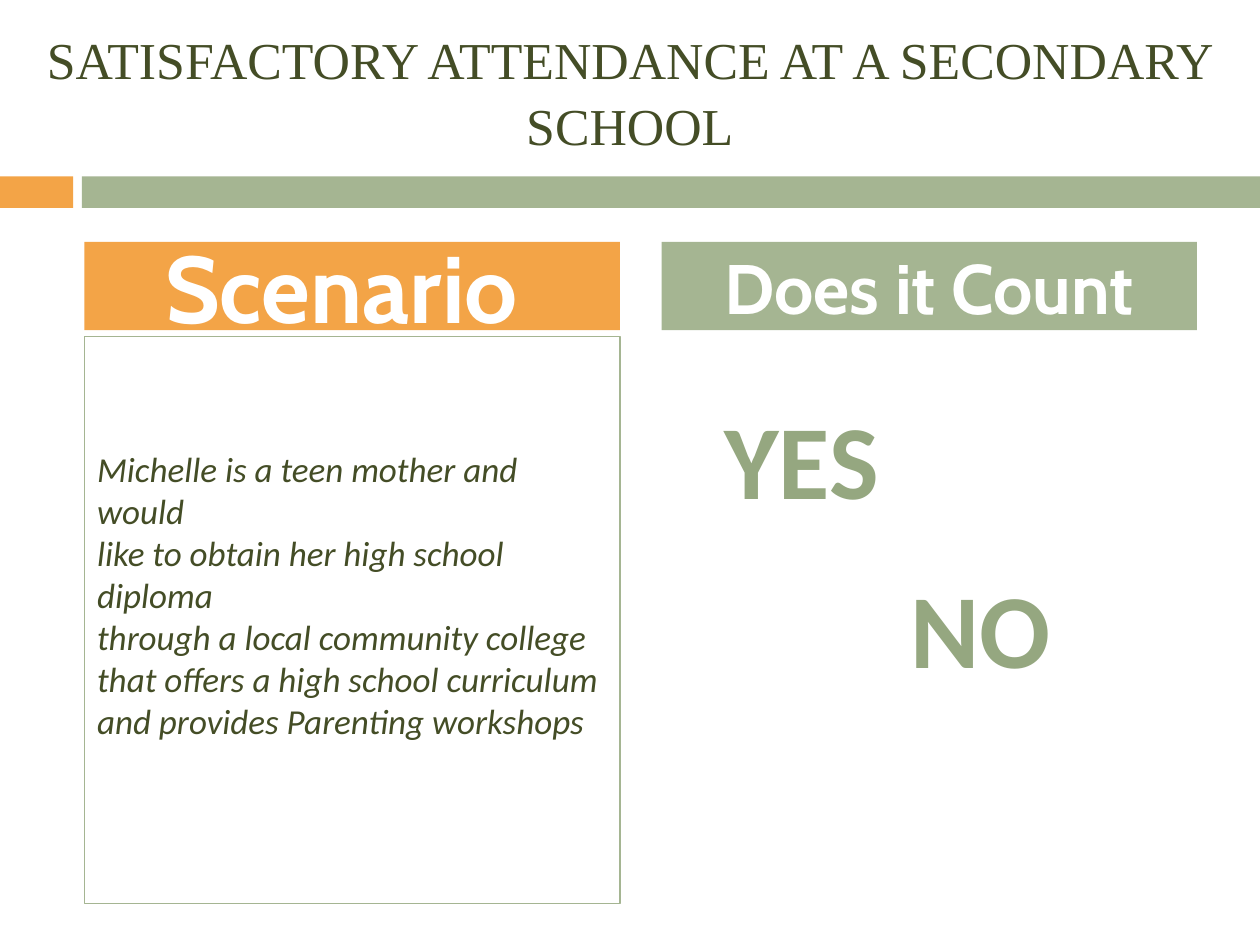
import pptx
import pptx.util
import pptx.dml.color
import pptx.enum.shapes
import pptx.enum.text
import lxml.etree

PX = 9144
ORANGE, GREEN, DARK, WHITE = "F3A447", "A5B592", "444D26", "FFFFFF"
ALIGN = pptx.enum.text.PP_ALIGN
MID = pptx.enum.text.MSO_ANCHOR.MIDDLE
TOP = pptx.enum.text.MSO_ANCHOR.TOP


def tint(color, value):
    color.rgb = pptx.dml.color.RGBColor.from_string(value)


def write(shape, text, box, font="Calibri", size=20, color=DARK, bold=False,
          italic=False, align=ALIGN.CENTER, anchor=MID, before=0, lead=1.0):
    shape.left, shape.top, shape.width, shape.height = [n * PX for n in box]
    frame = shape.text_frame
    frame.text = text
    frame.word_wrap = True
    frame.auto_size = pptx.enum.text.MSO_AUTO_SIZE.NONE
    frame.vertical_anchor = anchor
    for para in frame.paragraphs:
        para.alignment = align
        para.space_before = pptx.util.Pt(before)
        para.line_spacing = lead
        props = para._p.get_or_add_pPr()
        props.set("marL", "0")
        props.set("indent", "0")
        lxml.etree.SubElement(props, pptx.oxml.ns.qn("a:buNone"))
        for run in para.runs:
            run.font.name = font
            run.font.size = pptx.util.Pt(size)
            run.font.bold = bold
            run.font.italic = italic
            tint(run.font.color, color)


deck = pptx.Presentation()
deck.slide_width = 1000 * PX
deck.slide_height = 750 * PX
slide = deck.slides.add_slide(deck.slide_layouts[4])
title, left, story, right, spare = slide.placeholders
spare.element.getparent().remove(spare.element)

for x, wide, color in [(0, 58, ORANGE), (65, 935, GREEN)]:
    bar = slide.shapes.add_shape(pptx.enum.shapes.MSO_SHAPE.RECTANGLE,
                                 x * PX, 140 * PX, wide * PX, 25 * PX)
    bar.shadow.inherit = False
    bar.fill.solid()
    tint(bar.fill.fore_color, color)
    bar.line.fill.background()

write(title, "SATISFACTORY ATTENDANCE AT A SECONDARY SCHOOL", (0, 0, 1000, 142),
      font="Times New Roman", size=29.6, lead=1.07)

for head, text, x, size, color in [(left, "Scenario ", 67, 54, ORANGE),
                                   (right, "Does it Count", 525, 40, GREEN)]:
    write(head, text, (x, 192, 425, 70), font="Cabin", size=size,
          color=WHITE, bold=True, before=7)
    head.fill.solid()
    tint(head.fill.fore_color, color)

lines = ["Michelle is a teen mother and would",
         "like to obtain her high school diploma",
         "through a local community college",
         "that offers a high school curriculum",
         "and provides Parenting workshops"]
write(story, "\n".join(lines), (67, 267, 425, 450), italic=True, align=ALIGN.LEFT)
story.text_frame.margin_bottom = 45 * PX
tint(story.line.color, GREEN)
story.line.width = pptx.util.Pt(0.75)

for text, x, y in [("YES ", 533, 308), ("NO ", 675, 442)]:
    label = slide.shapes.add_textbox(0, 0, PX, PX)
    write(label, text, (x, y, 225, 111), size=60, color="95A780",
          bold=True, anchor=TOP)

deck.save("out.pptx")
